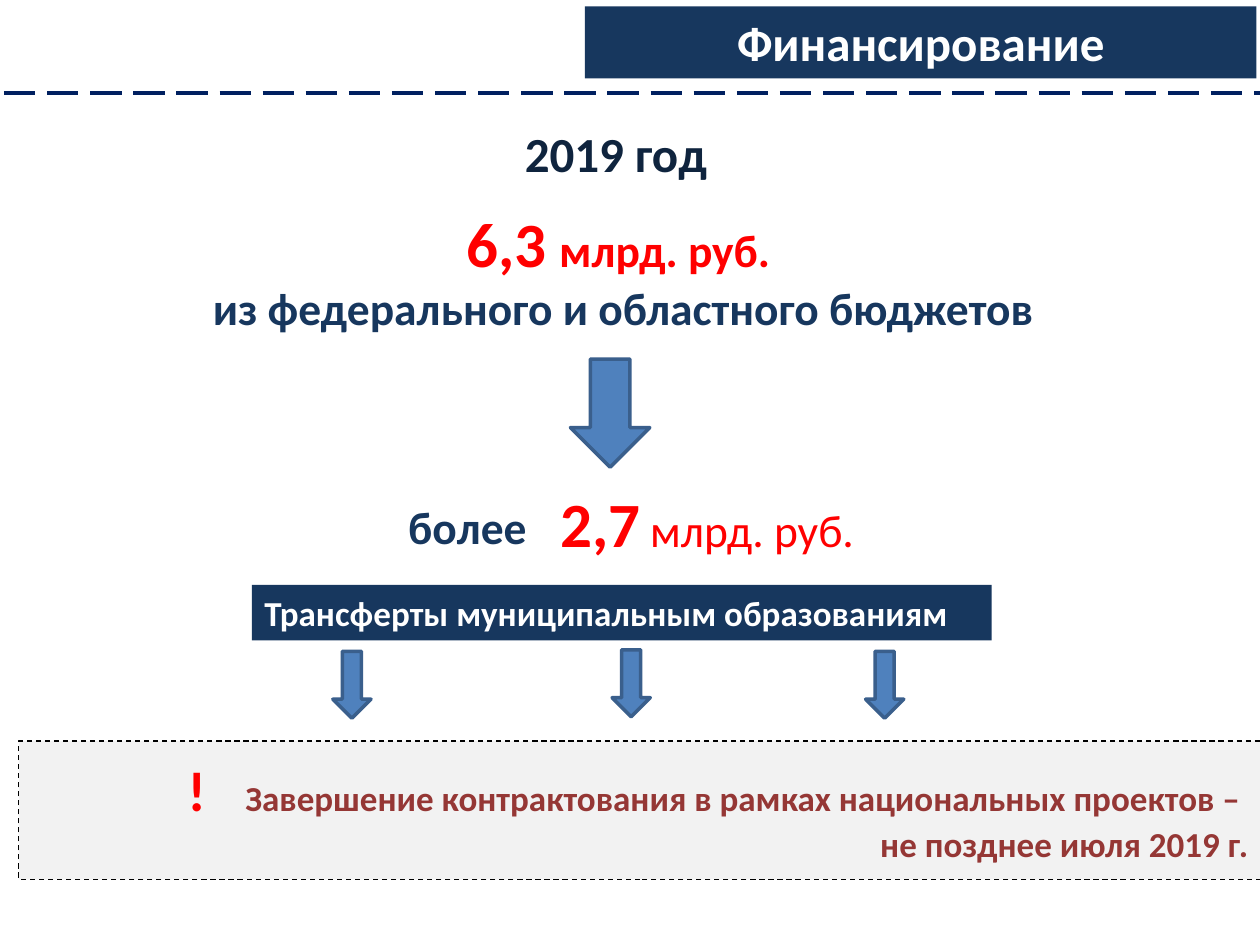
from lxml import etree
from pptx import Presentation
from pptx.dml.color import RGBColor
from pptx.enum.dml import MSO_LINE
from pptx.enum.shapes import MSO_CONNECTOR, MSO_SHAPE
from pptx.enum.text import MSO_ANCHOR, PP_ALIGN
from pptx.oxml.ns import qn
from pptx.util import Cm, Pt

NAVY = RGBColor(0x17, 0x37, 0x5E)
DARK = RGBColor(0x0F, 0x24, 0x3E)
RULE = RGBColor(0x00, 0x20, 0x60)
BLUE = RGBColor(0x4F, 0x81, 0xBD)
BLUE_EDGE = RGBColor(0x3A, 0x5F, 0x8C)
RED = RGBColor(0xFF, 0x00, 0x00)
BRICK = RGBColor(0x95, 0x37, 0x35)
GREY = RGBColor(0xF2, 0xF2, 0xF2)
BLACK = RGBColor(0x00, 0x00, 0x00)
WHITE = RGBColor(0xFF, 0xFF, 0xFF)
LEFT, CENTER, RIGHT = PP_ALIGN.LEFT, PP_ALIGN.CENTER, PP_ALIGN.RIGHT
RECT, DOWN_ARROW = MSO_SHAPE.RECTANGLE, MSO_SHAPE.DOWN_ARROW


def add_shape(kind, box, fill, line=None, width=0):
    sp = s.shapes.add_shape(kind, *(Cm(v) for v in box))
    sp.shadow.inherit = False
    sp.fill.solid()
    sp.fill.fore_color.rgb = fill
    if line is None:
        sp.line.fill.background()
    else:
        sp.line.color.rgb = line
        sp.line.width = Pt(width)
    return sp


def write(sp, align, *lines, wrap=True):
    """Fill sp with lines; each line is a list of (text, size, colour, bold) runs."""
    tf = sp.text_frame
    tf.word_wrap = wrap
    for i, line in enumerate(lines):
        p = tf.add_paragraph() if i else tf.paragraphs[0]
        p.alignment = align
        for text, size, color, bold in line:
            r = p.add_run()
            r.text = text
            r.font.name = "Calibri"
            r.font.size = Pt(size)
            r.font.color.rgb = color
            r.font.bold = bold


prs = Presentation()
prs.slide_width, prs.slide_height = Cm(25.4), Cm(19.05)
s = prs.slides.add_slide(prs.slide_layouts[6])

# Header
title = add_shape(RECT, (11.79, 0.13, 13.54, 1.45), NAVY)
title.text_frame.vertical_anchor = MSO_ANCHOR.MIDDLE
write(title, CENTER, [("Финансирование", 28, WHITE, True)])

rule = s.shapes.add_connector(MSO_CONNECTOR.STRAIGHT, Cm(0.08), Cm(1.88), Cm(25.58), Cm(1.88))
rule.line.color.rgb = RULE
rule.line.width = Pt(2.25)
rule.line.dash_style = MSO_LINE.LONG_DASH
etree.SubElement(rule._element.spPr, qn("a:effectLst"))

# Amounts
texts = [
    ((9.47, 2.36, 5.89, 1.45), CENTER, True, [[("2019 год", 28, DARK, True)]]),
    ((3.96, 3.99, 17.22, 2.9), CENTER, False, [
        [("6,3", 36, RED, True), (" ", 32, RED, True), ("млрд. руб. ", 26, RED, True)],
        [("из федерального и областного бюджетов", 26, NAVY, True)],
    ]),
    ((7.98, 9.93, 2.92, 1.37), LEFT, False, [[("более", 26, NAVY, True)]]),
    ((11.05, 9.65, 6.48, 1.8), LEFT, False, [
        [("2,7", 36, RED, True), (" ", 24, RED, False), ("млрд. руб.", 26, RED, False)],
    ]),
]
for box, align, wrap, lines in texts:
    write(s.shapes.add_textbox(*(Cm(v) for v in box)), align, *lines, wrap=wrap)

# Transfers
transfers = add_shape(RECT, (5.08, 11.79, 14.91, 1.12), NAVY)
write(transfers, LEFT, [("Трансферты муниципальным образованиям", 20, WHITE, True)])

add_shape(DOWN_ARROW, (11.5, 7.24, 1.6, 2.18), BLUE, BLUE_EDGE, 2)
for x, y in ((6.71, 13.13), (12.34, 13.1), (17.45, 13.13)):
    add_shape(DOWN_ARROW, (x, y, 0.77, 1.35), BLUE, BLUE_EDGE, 2)

# Deadline
deadline = add_shape(RECT, (0.38, 14.94, 25.04, 2.79), GREY, BLACK, 0.75)
deadline.line.dash_style = MSO_LINE.DASH
deadline.text_frame.vertical_anchor = MSO_ANCHOR.MIDDLE
write(
    deadline, RIGHT,
    [("!", 32, RED, True), (" ", 20, BRICK, True),
     ("Завершение контрактования в рамках национальных проектов – ", 20, BRICK, True)],
    [("не позднее июля 2019 г.", 20, BRICK, True)],
)
# Letter spacing sets the gap after the exclamation mark
gap = deadline.text_frame.paragraphs[0].runs[1]
gap.font._element.set("spc", "1800")

prs.save("out.pptx")
